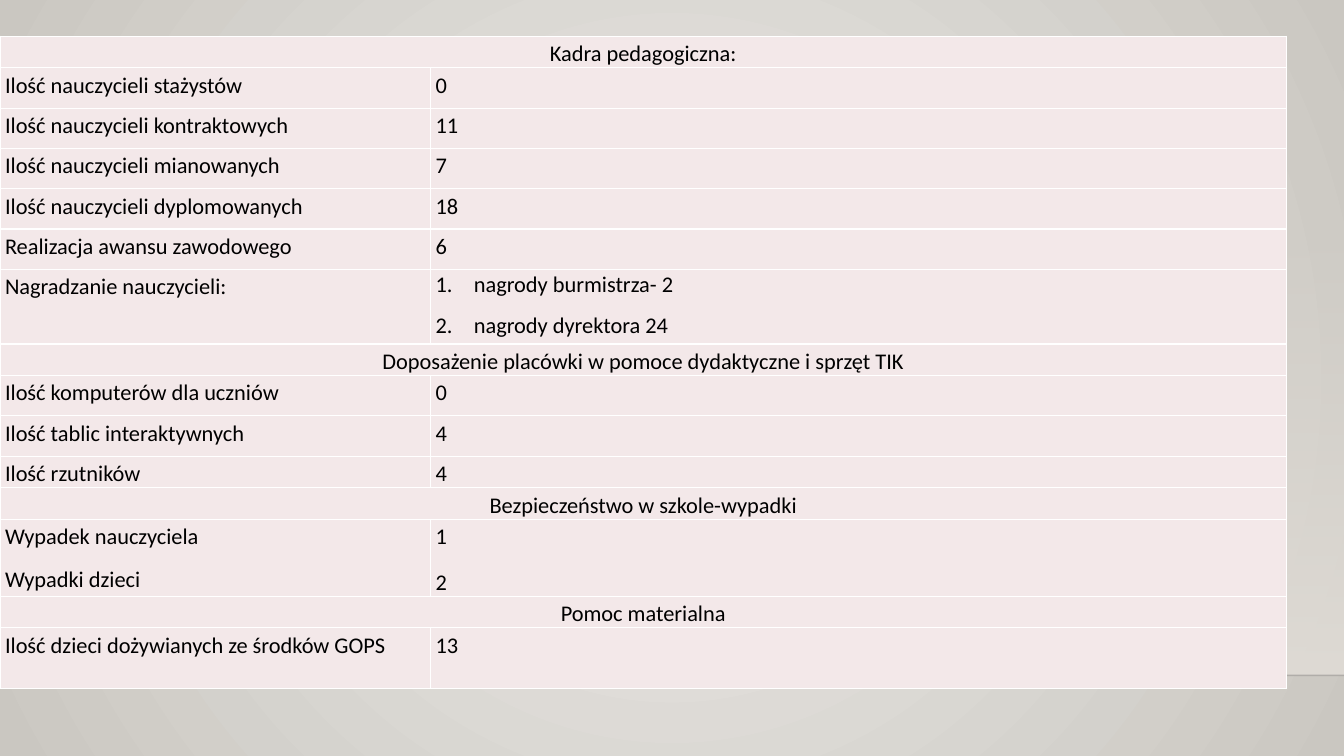
import pptx
import pptx.util
import pptx.enum.shapes
import pptx.enum.text
import pptx.dml.color
import pptx.oxml
import pptx.oxml.ns

ROWS = [
    (0.19, "Kadra pedagogiczna:"),
    (0.4, "Ilość nauczycieli stażystów", "0"),
    (0.4, "Ilość nauczycieli kontraktowych", "11"),
    (0.4, "Ilość nauczycieli mianowanych", "7"),
    (0.4, "Ilość nauczycieli dyplomowanych", "18"),
    (0.4, "Realizacja awansu zawodowego", "6"),
    (0.74, "Nagradzanie nauczycieli:", ["nagrody burmistrza- 2", "nagrody dyrektora 24"]),
    (0.19, "Doposażenie placówki w pomoce dydaktyczne i sprzęt TIK"),
    (0.4, "Ilość komputerów dla uczniów", "0"),
    (0.4, "Ilość tablic interaktywnych", "4"),
    (0.19, "Ilość rzutników", "4"),
    (0.19, "Bezpieczeństwo w szkole-wypadki"),
    (0.59, "Wypadek nauczyciela\nWypadki dzieci", "1\n2"),
    (0.19, "Pomoc materialna"),
    (0.6, "Ilość dzieci dożywianych ze środków GOPS", "13"),
]
COLORS = {
    "center": "ECEAE7", "edge": "CAC7C1", "band": "DFDBD5",
    "horizon": "000001", "cell": "F3E8E9", "border": "FFFFFF", "text": "000000",
}
WIDTH, HEIGHT = 13.33, 7.5
COLUMNS = (4.27, 8.49)
TABLE_TOP, TABLE_HEIGHT = 0.36, 6.26
BAND_TOP, HORIZON = 2.21, 6.7
inches = pptx.util.Inches


def color(name):
    return pptx.dml.color.RGBColor.from_string(COLORS[name])


def element(xml):
    namespace = pptx.oxml.ns.nsdecls("a")
    head, mark, tail = xml.partition(" ")
    return pptx.oxml.parse_xml(f"{head} {namespace} {tail}")


def set_gradient(fill, first, last):
    fill.gradient()
    for stop, name in zip(fill.gradient_stops, (first, last)):
        stop.color.rgb = color(name)
    for stop, position in zip(fill.gradient_stops, (0, 1)):
        stop.position = position


def set_alpha(parent, percent):
    target = next(parent.iter(pptx.oxml.ns.qn("a:srgbClr")))
    target.append(element(f'<a:alpha val="{percent * 1000}"/>'))


def write_text(frame, text, align="LEFT", line=1.15, after=10, numbered=False):
    lines = text if numbered else text.split("\n")
    for index, words in enumerate(lines):
        paragraph = frame.add_paragraph() if index else frame.paragraphs[0]
        if numbered:
            properties = paragraph._p.get_or_add_pPr()
            properties.set("marL", str(inches(0.38)))
            properties.set("indent", str(-inches(0.38)))
            properties.append(element('<a:buAutoNum type="arabicPeriod"/>'))
        paragraph.alignment = getattr(pptx.enum.text.PP_ALIGN, align)
        paragraph.line_spacing = line
        paragraph.space_after = pptx.util.Pt(after)
        run = paragraph.add_run()
        run.text = words
        run.font.name = "Calibri"
        run.font.size = pptx.util.Pt(16)
        run.font.color.rgb = color("text")


def style_cell(cell):
    cell.margin_left = cell.margin_right = inches(0.05)
    cell.margin_top = cell.margin_bottom = 0
    cell.fill.solid()
    cell.fill.fore_color.rgb = color("cell")
    for index, side in enumerate("LRTB"):
        cell._tc.get_or_add_tcPr().insert(index, element(
            f'<a:ln{side} w="12700"><a:solidFill><a:srgbClr val="{COLORS["border"]}"/>'
            f'</a:solidFill></a:ln{side}>'))


def draw_background(slide):
    fill = slide.background.fill
    set_gradient(fill, "center", "edge")
    linear = next(slide.background._cSld.iter(pptx.oxml.ns.qn("a:lin")))
    linear.getparent().replace(linear, element(
        '<a:path path="circle"><a:fillToRect l="50000" t="50000" r="50000" b="50000"/></a:path>'))

    band = slide.shapes.add_shape(
        pptx.enum.shapes.MSO_SHAPE.RECTANGLE, 0, inches(BAND_TOP),
        inches(WIDTH), inches(HORIZON - BAND_TOP))
    band.shadow.inherit = False
    band.line.fill.background()
    set_gradient(band.fill, "band", "band")
    band.fill.gradient_angle = 270
    set_alpha(band._element.spPr, 0)

    horizon = slide.shapes.add_connector(
        pptx.enum.shapes.MSO_CONNECTOR.STRAIGHT, 0, inches(HORIZON),
        inches(WIDTH), inches(HORIZON))
    horizon.line.width = pptx.util.Pt(1)
    horizon.line.color.rgb = color("horizon")
    set_alpha(horizon._element.spPr, 20)
    horizon._element.spPr.append(element('<a:effectLst />'))


def draw_table(slide):
    frame = slide.shapes.add_table(
        len(ROWS), len(COLUMNS), 0, inches(TABLE_TOP),
        inches(sum(COLUMNS)), inches(TABLE_HEIGHT))
    table = frame.table
    table.first_row = table.horz_banding = False
    for column, width in zip(table.columns, COLUMNS):
        column.width = inches(width)
    for index, (height, label, *values) in enumerate(ROWS):
        table.rows[index].height = inches(height)
        left, right = table.cell(index, 0), table.cell(index, 1)
        style_cell(left)
        style_cell(right)
        if not values:
            left.merge(right)
            write_text(left.text_frame, label, align="CENTER")
            continue
        write_text(left.text_frame, label, after=8)
        value = values[0]
        if isinstance(value, list):
            write_text(right.text_frame, value, line=1.07, after=8, numbered=True)
        else:
            write_text(right.text_frame, value)
    frame.height = inches(TABLE_HEIGHT)


def main():
    presentation = pptx.Presentation()
    presentation.slide_width = inches(WIDTH)
    presentation.slide_height = inches(HEIGHT)
    slide = presentation.slides.add_slide(presentation.slide_layouts[6])
    draw_background(slide)
    draw_table(slide)
    presentation.save("out.pptx")


if __name__ == "__main__":
    main()
